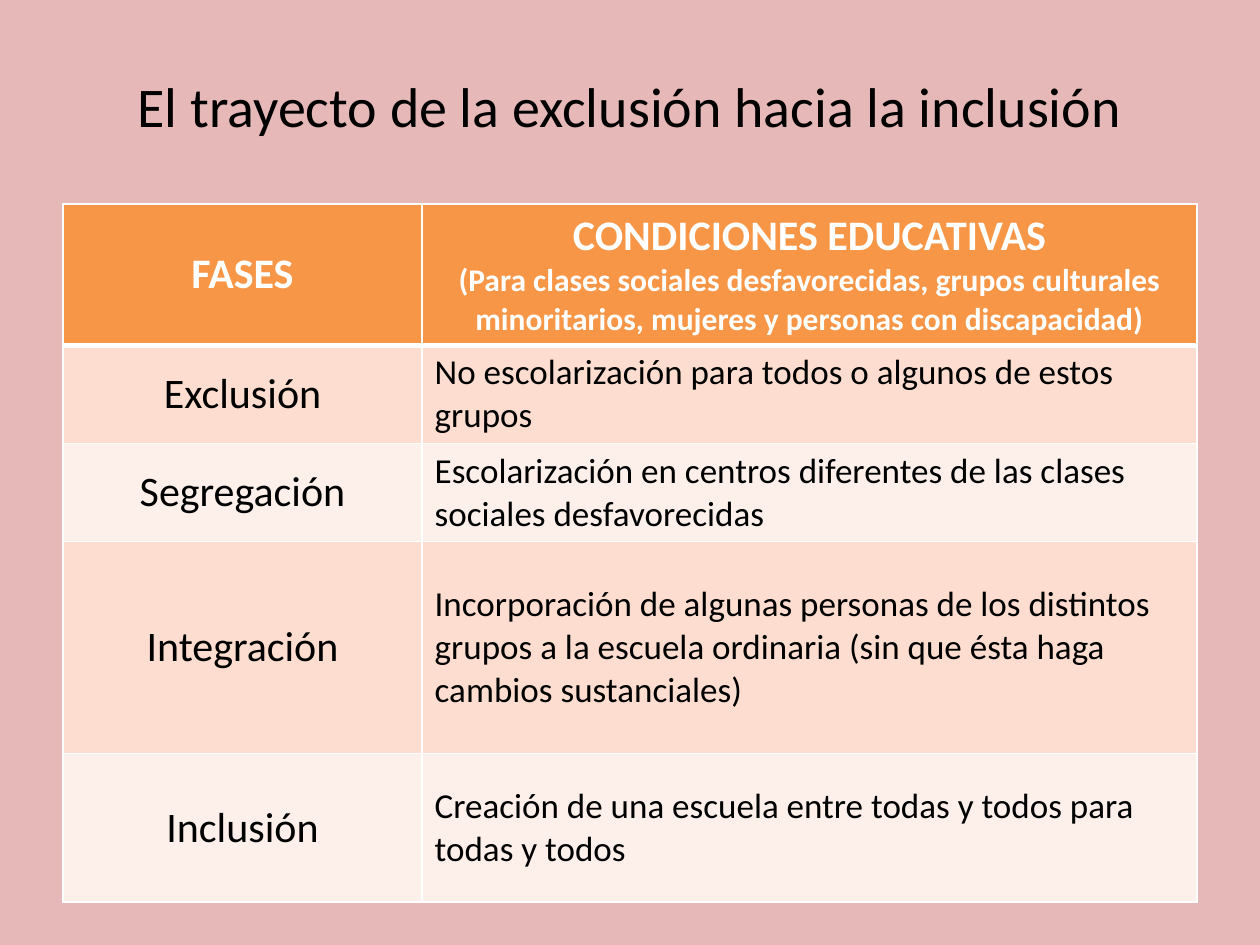
from lxml import etree
from pptx import Presentation
from pptx.dml.color import RGBColor
from pptx.enum.text import MSO_ANCHOR, PP_ALIGN
from pptx.oxml.ns import qn
from pptx.util import Inches, Pt

MIDDLE = MSO_ANCHOR.MIDDLE
TOP = MSO_ANCHOR.TOP
CENTER = PP_ALIGN.CENTER
LEFT = PP_ALIGN.LEFT

FONT = "Calibri"
COLORS = {
    "background": "E6B9B8",
    "header": "F79646",
    "odd_row": "FCDDCF",
    "even_row": "FDEFE9",
    "border": "FFFFFF",
    "header_text": "FFFFFF",
    "text": "000000",
}

TITLE = "El trayecto de la exclusión hacia la inclusión"
HEADER_PHASE = "FASES"
HEADER_CONDITIONS = [
    "CONDICIONES EDUCATIVAS",
    "(Para clases sociales desfavorecidas, grupos culturales minoritarios, "
    "mujeres y personas con discapacidad)",
]
PHASES = [
    ("Exclusión", "No escolarización para todos o algunos de estos grupos"),
    ("Segregación", "Escolarización en centros diferentes de las clases sociales "
                    "desfavorecidas"),
    ("Integración", "Incorporación de algunas personas de los distintos grupos a la "
                    "escuela ordinaria (sin que ésta haga cambios sustanciales)"),
    ("Inclusión", "Creación de una escuela entre todas y todos para todas y todos"),
]
COLUMN_WIDTHS = [2.85, 6.15]
ROW_HEIGHTS = [1.12, 0.78, 0.78, 1.68, 1.18]


def rgb(name):
    return RGBColor.from_string(COLORS[name])


def write_text(text_frame, lines, sizes, color, alignment, bold=False):
    text_frame.text = "\n".join(lines)
    for paragraph, size in zip(text_frame.paragraphs, sizes):
        paragraph.alignment = alignment
        for run in paragraph.runs:
            run.font.name = FONT
            run.font.size = Pt(size)
            run.font.bold = bold
            run.font.color.rgb = rgb(color)


def add_borders(cell, top, bottom):
    """Draw the four cell borders; top and bottom are widths in points."""
    properties = cell._tc.get_or_add_tcPr()
    for side, width in (("L", 1), ("R", 1), ("T", top), ("B", bottom)):
        line = etree.SubElement(properties, qn(f"a:ln{side}"), w=str(Pt(width)))
        fill = etree.SubElement(line, qn("a:solidFill"))
        etree.SubElement(fill, qn("a:srgbClr"), val=COLORS["border"])


def style_cell(cell, fill, anchor, top=1, bottom=1):
    add_borders(cell, top, bottom)
    cell.fill.solid()
    cell.fill.fore_color.rgb = rgb(fill)
    cell.vertical_anchor = anchor


def add_title(slide):
    box = slide.shapes.add_textbox(Inches(0.5), Inches(0.21), Inches(9), Inches(1.25))
    box.text_frame.word_wrap = True
    box.text_frame.vertical_anchor = MIDDLE
    write_text(box.text_frame, [TITLE], [32], "text", CENTER)


def add_phase_table(slide):
    table = slide.shapes.add_table(
        len(ROW_HEIGHTS), len(COLUMN_WIDTHS), Inches(0.5), Inches(1.62),
        Inches(sum(COLUMN_WIDTHS)), Inches(sum(ROW_HEIGHTS))).table
    for column, width in zip(table.columns, COLUMN_WIDTHS):
        column.width = Inches(width)
    for row, height in zip(table.rows, ROW_HEIGHTS):
        row.height = Inches(height)

    headers = [([HEADER_PHASE], MIDDLE), (HEADER_CONDITIONS, TOP)]
    for column, (lines, anchor) in enumerate(headers):
        cell = table.cell(0, column)
        style_cell(cell, "header", anchor, bottom=3)
        write_text(cell.text_frame, lines, [24, 18], "header_text", CENTER, bold=True)

    for row, texts in enumerate(PHASES, start=1):
        fill = "odd_row" if row % 2 else "even_row"
        formats = [(24, CENTER), (20, LEFT)]
        for column, (text, (size, alignment)) in enumerate(zip(texts, formats)):
            cell = table.cell(row, column)
            style_cell(cell, fill, MIDDLE, top=3 if row == 1 else 1)
            write_text(cell.text_frame, [text], [size], "text", alignment)


def main():
    presentation = Presentation()
    presentation.slide_width = Inches(10)
    presentation.slide_height = Inches(7.5)
    slide = presentation.slides.add_slide(presentation.slide_layouts[6])
    slide.background.fill.solid()
    slide.background.fill.fore_color.rgb = rgb("background")
    add_title(slide)
    add_phase_table(slide)
    presentation.save("out.pptx")


if __name__ == "__main__":
    main()
